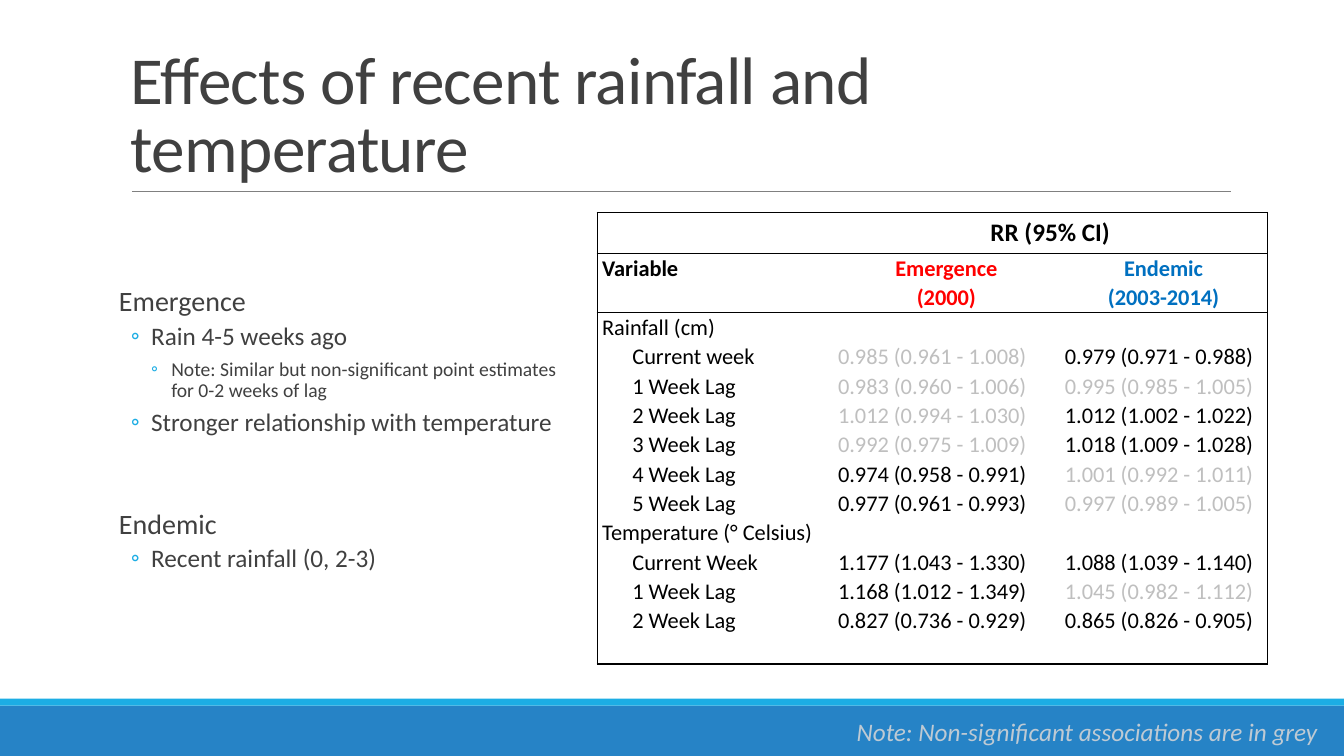
from lxml.etree import SubElement
from pptx import Presentation
from pptx.dml.color import RGBColor
from pptx.enum.shapes import MSO_CONNECTOR, MSO_SHAPE
from pptx.enum.text import MSO_ANCHOR, PP_ALIGN
from pptx.oxml.ns import qn
from pptx.util import Pt

BLACK, GREY, DARK, CYAN = "000000", "BFBFBF", "404040", "1CADE4"


def color(hex_string):
    return RGBColor.from_string(hex_string)


def write(paragraph, text, size=16, ink=BLACK, bold=False, italic=False,
          align=PP_ALIGN.LEFT, line=1.0, before=0, after=0, margin=0, bullet=None, tracking=None):
    """Format a paragraph and fill it with one run; an empty text only sets the line height."""
    paragraph.alignment, paragraph.line_spacing = align, line
    paragraph.space_before, paragraph.space_after = Pt(before), Pt(after)
    properties = paragraph._p.get_or_add_pPr()
    properties.set("marL", str(Pt(margin)))
    properties.set("indent", str(Pt(-14.4 if bullet else 0)))
    if bullet:
        bullet_color = SubElement(properties, qn("a:buClr"))
        SubElement(bullet_color, qn("a:srgbClr"), val=CYAN)
        SubElement(properties, qn("a:buFont"), typeface="Calibri")
        SubElement(properties, qn("a:buChar"), char=bullet)
    else:
        SubElement(properties, qn("a:buNone"))
    if not text:
        SubElement(paragraph._p, qn("a:endParaRPr"), sz=str(size * 100))
        return
    run = paragraph.add_run()
    run.text = text
    run.font.name, run.font.size = "Calibri", Pt(size)
    run.font.bold, run.font.italic = bold, italic
    run.font.color.rgb = color(ink)
    if tracking:
        run._r.get_or_add_rPr().set("spc", str(tracking))


presentation = Presentation()
presentation.slide_width, presentation.slide_height = Pt(960), Pt(540)
slide = presentation.slides.add_slide(presentation.slide_layouts[6])

# Footer bands
for top, height, fill in [(504, 36, "2683C6"), (499, 5, CYAN)]:
    band = slide.shapes.add_shape(MSO_SHAPE.RECTANGLE, Pt(0), Pt(top), Pt(960), Pt(height))
    band.shadow.inherit = False
    band.fill.solid()
    band.fill.fore_color.rgb = color(fill)
    band.line.fill.background()

# Title and its rule
rule = slide.shapes.add_connector(MSO_CONNECTOR.STRAIGHT, Pt(94.3), Pt(136.8), Pt(879), Pt(136.8))
rule.line.color.rgb = color("808080")
rule.line.width = Pt(0.5)
SubElement(rule._element.spPr, qn("a:effectLst"))

title = slide.shapes.add_textbox(Pt(86.4), Pt(22.3), Pt(792), Pt(114.5)).text_frame
title.word_wrap = True
title.vertical_anchor = MSO_ANCHOR.BOTTOM
write(title.paragraphs[0], "Effects of recent rainfall and temperature",
      size=48, ink=DARK, line=0.85, tracking=-50)

# Findings
findings = slide.shapes.add_textbox(Pt(77.8), Pt(202), Pt(324), Pt(305)).text_frame
findings.word_wrap = True
findings.margin_left = findings.margin_right = 0
heading = dict(size=20, after=2, margin=7.2)
point = dict(size=18, before=2, after=4, margin=30.2, bullet="◦")
detail = point | dict(size=14, margin=44.6)
for index, (text, style) in enumerate([
    ("Emergence", heading),
    ("Rain 4-5 weeks ago", point),
    ("Note: Similar but non-significant point estimates for 0-2 weeks of lag", detail),
    ("Stronger relationship with temperature", point),
    ("Endemic", heading | dict(before=48)),
    ("Recent rainfall (0, 2-3)", point),
]):
    paragraph = findings.add_paragraph() if index else findings.paragraphs[0]
    write(paragraph, text, ink=DARK, line=0.9, **style)

# Rate ratios: label, emergence, endemic, and the columns that are not significant
header_rows = [
    ("", "RR (95% CI)", "", ()),
    ("Variable", "Emergence\n(2000)", "Endemic\n(2003-2014)", ()),
]
body_rows = [
    ("Rainfall (cm)", "", "", ()),
    ("Current week", "0.985 (0.961 - 1.008)", "0.979 (0.971 - 0.988)", (1,)),
    ("1 Week Lag", "0.983 (0.960 - 1.006)", "0.995 (0.985 - 1.005)", (1, 2)),
    ("2 Week Lag", "1.012 (0.994 - 1.030)", "1.012 (1.002 - 1.022)", (1,)),
    ("3 Week Lag", "0.992 (0.975 - 1.009)", "1.018 (1.009 - 1.028)", (1,)),
    ("4 Week Lag", "0.974 (0.958 - 0.991)", "1.001 (0.992 - 1.011)", (2,)),
    ("5 Week Lag", "0.977 (0.961 - 0.993)", "0.997 (0.989 - 1.005)", (2,)),
    ("Temperature (° Celsius)", "", "", ()),
    ("Current Week", "1.177 (1.043 - 1.330)", "1.088 (1.039 - 1.140)", ()),
    ("1 Week Lag", "1.168 (1.012 - 1.349)", "1.045 (0.982 - 1.112)", (2,)),
    ("2 Week Lag", "0.827 (0.736 - 0.929)", "0.865 (0.826 - 0.905)", ()),
    ("", "", "", ()),
]
rows = header_rows + body_rows
heights = [29.3, 42] + [20.95] * len(body_rows)
widths = [168.5, 162, 148.3]
last_row = len(rows) - 1
header_colors = [BLACK, "FF0000", "0070C0"]

table = slide.shapes.add_table(len(rows), 3, Pt(426.5), Pt(151.7),
                               Pt(sum(widths)), Pt(sum(heights))).table
table.first_row = table.horz_banding = False
for column, width in zip(table.columns, widths):
    column.width = Pt(width)
for row, height in zip(table.rows, heights):
    row.height = Pt(height)
table.cell(0, 1).merge(table.cell(0, 2))

for row_index, (*texts, faded) in enumerate(rows):
    for column_index, text in enumerate(texts):
        cell = table.cell(row_index, column_index)
        is_header = row_index < 2
        if row_index:
            cell.margin_left = cell.margin_right = Pt(3.6)
            cell.margin_top = cell.margin_bottom = 0
        is_label = column_index == 0
        indented = is_label and "Week" in text.title()
        ink = GREY if column_index in faded else BLACK
        for line_index, line_text in enumerate(text.split("\n")):
            paragraph = cell.text_frame.add_paragraph() if line_index else cell.text_frame.paragraphs[0]
            write(paragraph, line_text, size=16 if row_index else 18, bold=is_header,
                  ink=header_colors[column_index] if row_index == 1 else ink,
                  align=PP_ALIGN.CENTER if is_header and not is_label else PP_ALIGN.LEFT,
                  line=1.07 if row_index else 1.0, margin=21.6 if indented else 0)
        edges = {
            "a:lnL": is_label,
            "a:lnR": column_index == 2 or cell.is_merge_origin,
            "a:lnT": row_index <= 2,
            "a:lnB": row_index in (0, 1, last_row),
        }
        cell_properties = cell._tc.get_or_add_tcPr()
        for tag, visible in edges.items():
            edge = SubElement(cell_properties, qn(tag), w=str(Pt(1)))
            if visible:
                SubElement(SubElement(edge, qn("a:solidFill")), qn("a:srgbClr"), val=BLACK)
            else:
                SubElement(edge, qn("a:noFill"))
        cell.fill.background()

# Footnote
footnote = slide.shapes.add_textbox(Pt(604.8), Pt(508.3), Pt(350), Pt(29)).text_frame
footnote.word_wrap = True
write(footnote.paragraphs[0], "Note: Non-significant associations are in grey",
      size=18, ink="BECAD4", italic=True)

presentation.save("out.pptx")
